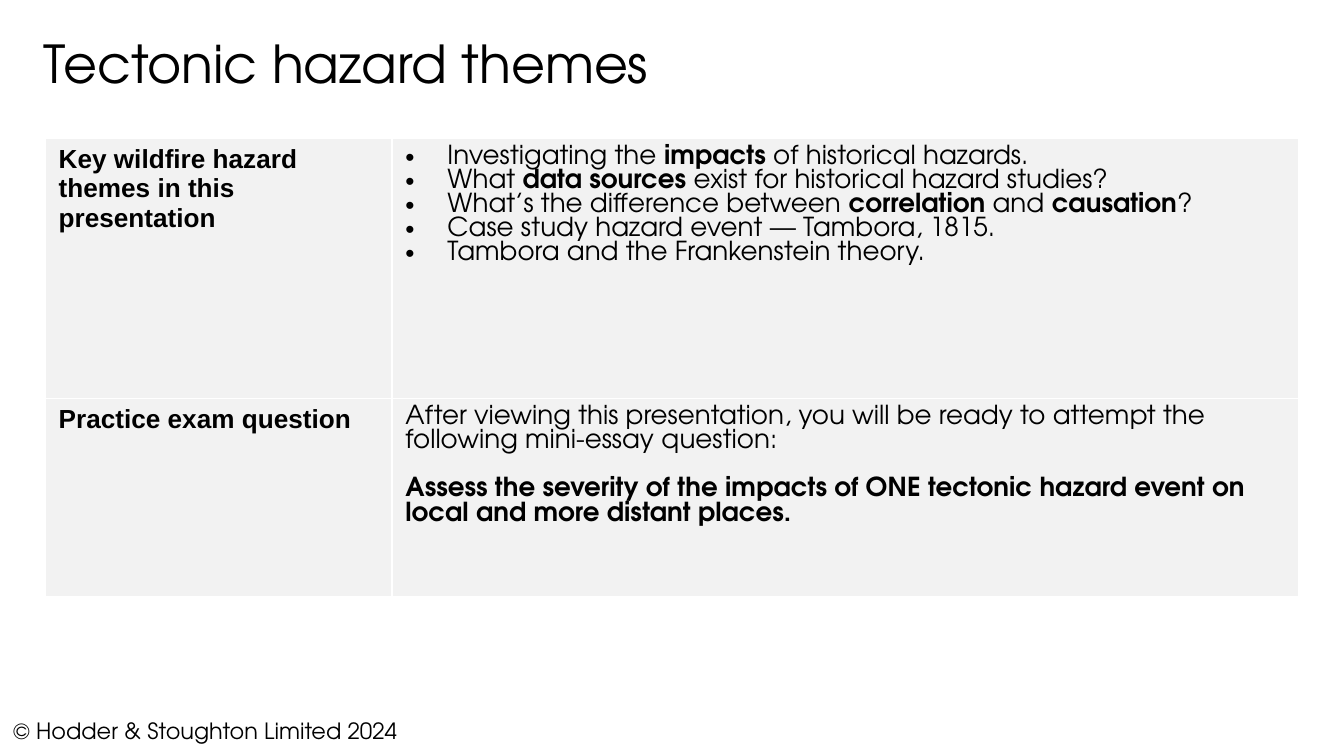
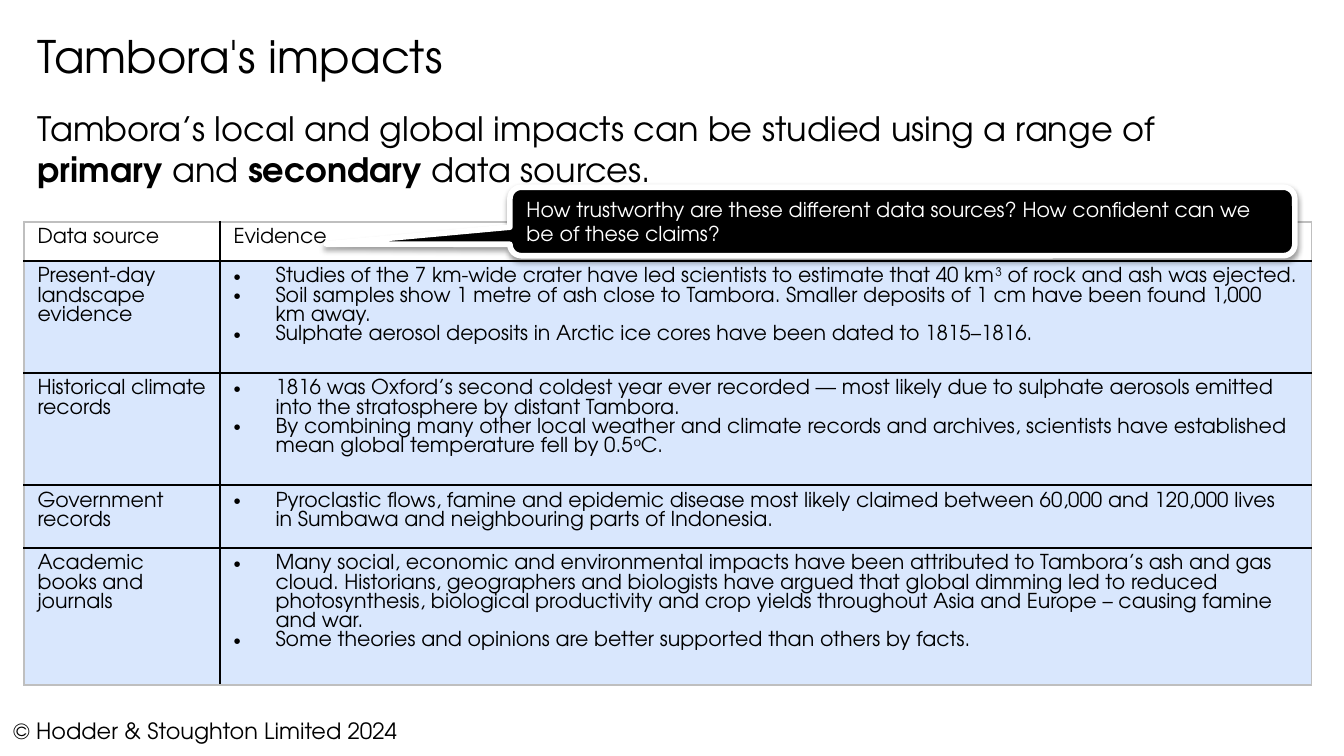
import lxml.etree
import pptx
import pptx.dml.color
import pptx.enum.shapes
import pptx.enum.text
import pptx.oxml.ns
import pptx.util

Pt = pptx.util.Pt
qn = pptx.oxml.ns.qn

COLORS = {
    "black": "000000",
    "white": "FFFFFF",
    "theme_fill": "F2F2F2",
    "evidence_fill": "D9E7FD",
    "outer_edge": "BFBFBF",
}
BODY_FONT = "TeX Gyre Adventor"
LABEL_FONT = "Arial"
COPYRIGHT = "© Hodder & Stoughton Limited 2024"
BULLET_INDENT = 22.5

THEMES = [
    "Investigating the **impacts** of historical hazards.",
    "What **data sources **exist for historical hazard studies?",
    "What’s the difference between **correlation** and **causation**?",
    "Case study hazard event — Tambora, 1815.",
    "Tambora and the Frankenstein theory.",
]
EXAM_QUESTION = [
    "After viewing this presentation, you will be ready to attempt the following mini-essay question:",
    "**Assess the severity of the impacts of ONE tectonic hazard event on local and more distant places.**",
]
EVIDENCE = [
    ("Present-day landscape evidence", [
        "Studies of the 7 km-wide crater have led scientists to estimate that 40 km^3^ of rock and ash was ejected.",
        "Soil samples show 1 metre of ash close to Tambora. Smaller deposits of 1 cm have been found 1,000 km away.",
        "Sulphate aerosol deposits in Arctic ice cores have been dated to 1815–1816.",
    ]),
    ("Historical climate records", [
        "1816 was Oxford’s second coldest year ever recorded — most likely due to sulphate aerosols emitted "
        "into the stratosphere by distant Tambora.",
        "By combining many other local weather and climate records and archives, scientists have established "
        "mean global temperature fell by 0.5ᵒC.",
    ]),
    ("Government records", [
        "Pyroclastic flows, famine and epidemic disease most likely claimed between 60,000 and 120,000 lives "
        "in Sumbawa and neighbouring parts of Indonesia.",
    ]),
    ("Academic books and journals", [
        "Many social, economic and environmental impacts have been attributed to Tambora’s ash and gas cloud. "
        "Historians, geographers and biologists have argued that global dimming led to reduced photosynthesis, "
        "biological productivity and crop yields throughout Asia and Europe – causing famine and war.",
        "Some theories and opinions are better supported than others by facts.",
    ]),
]


def rgb(color):
    return pptx.dml.color.RGBColor.from_string(COLORS[color])


def add_element(parent, tag, **attributes):
    element = lxml.etree.SubElement(parent, qn(tag))
    for key, value in attributes.items():
        element.set(key, str(value))
    return element


def add_marked_runs(paragraph, text):
    """**...** marks bold text, ^...^ marks superscript."""
    for i, part in enumerate(text.split("**")):
        for j, piece in enumerate(part.split("^")):
            if not piece:
                continue
            run = paragraph.add_run()
            run.text = piece
            if i % 2:
                run.font.bold = True
            if j % 2:
                run.font._element.set("baseline", "30000")


def write(frame, lines, size, font=BODY_FONT, color="black", bold=None,
          bullets=False, spacing=None, gap=0):
    for i, line in enumerate(lines):
        paragraph = frame.add_paragraph() if i else frame.paragraphs[0]
        if bullets:
            properties = paragraph._p.get_or_add_pPr()
            properties.set("marL", str(Pt(BULLET_INDENT)))
            properties.set("indent", str(-Pt(BULLET_INDENT)))
            add_element(properties, "a:buFont", typeface=LABEL_FONT)
            add_element(properties, "a:buChar", char="•")
        if spacing:
            paragraph.line_spacing = spacing
        if i and gap:
            paragraph.space_before = Pt(gap)
        paragraph.font.size = Pt(size)
        paragraph.font.name = font
        paragraph.font.color.rgb = rgb(color)
        if bold is not None:
            paragraph.font.bold = bold
        add_marked_runs(paragraph, line)


def add_text(slide, box, text, size, inset=3.6, spacing=None):
    frame = slide.shapes.add_textbox(*map(Pt, box)).text_frame
    frame.word_wrap = True
    frame.margin_top = frame.margin_bottom = Pt(inset)
    write(frame, [text], size, spacing=spacing)


def add_frame(slide, title, title_box, title_size):
    """Title and copyright line shared by all slides."""
    add_text(slide, title_box, title, title_size, inset=7.2)
    add_text(slide, (0, 380.6, 256, 21.6), COPYRIGHT, 12)


def add_grid(slide, left, top, widths, heights):
    table = slide.shapes.add_table(
        len(heights), len(widths), Pt(left), Pt(top),
        Pt(sum(widths)), Pt(sum(heights))).table
    table.first_row = table.horz_banding = False
    for column, width in zip(table.columns, widths):
        column.width = Pt(width)
    for row, height in zip(table.rows, heights):
        row.height = Pt(height)
    return table


def style_grid(table, inner, outer, fill_of_row):
    last_row, last_column = len(table.rows) - 1, len(table.columns) - 1
    for r in range(last_row + 1):
        for c in range(last_column + 1):
            cell = table.cell(r, c)
            edges = {"a:lnL": c == 0, "a:lnR": c == last_column,
                     "a:lnT": r == 0, "a:lnB": r == last_row}
            for tag, is_outer in edges.items():
                line = add_element(cell._tc.get_or_add_tcPr(), tag, w=Pt(1))
                fill = add_element(line, "a:solidFill")
                add_element(fill, "a:srgbClr", val=COLORS[outer if is_outer else inner])
            cell.fill.solid()
            cell.fill.fore_color.rgb = rgb(fill_of_row(r))


def add_themes_table(slide, left, top):
    table = add_grid(slide, left, top, [185.8, 486], [139.4, 106.3])
    style_grid(table, "white", "white", lambda row: "theme_fill")
    labels = ["Key wildfire hazard themes in this presentation", "Practice exam question"]
    for row, label in enumerate(labels):
        write(table.cell(row, 0).text_frame, [label], 14, font=LABEL_FONT, bold=True)
    write(table.cell(0, 1).text_frame, THEMES, 14, bullets=True)
    write(table.cell(1, 1).text_frame, EXAM_QUESTION, 14, gap=13)


def add_evidence_table(slide, left, top):
    table = add_grid(slide, left, top, [105, 584.8], [21, 60, 60, 33.5, 73.5])
    style_grid(table, "black", "outer_edge",
               lambda row: "evidence_fill" if row else "white")
    for row, (source, findings) in enumerate([("Data source", ["Evidence"]), *EVIDENCE]):
        write(table.cell(row, 0).text_frame, [source], 11)
        write(table.cell(row, 1).text_frame, findings, 11, bullets=row > 0)


def add_question_callout(slide, box):
    callout = slide.shapes.add_shape(
        pptx.enum.shapes.MSO_SHAPE.ROUNDED_RECTANGULAR_CALLOUT, *map(Pt, box))
    for i, value in enumerate([-0.734, 0.329, 0.167]):
        callout.adjustments[i] = value
    callout.fill.solid()
    callout.fill.fore_color.rgb = rgb("black")
    callout.line.color.rgb = rgb("white")
    callout.line.width = Pt(3)

    # Soft shadow straight below
    callout.shadow.inherit = False
    effects = callout._element.spPr.find(qn("a:effectLst"))
    shadow = add_element(effects, "a:outerShdw", blurRad=Pt(3.1), dist=Pt(1.6),
                         dir=5400000, rotWithShape=0)
    shade = add_element(shadow, "a:srgbClr", val=COLORS["black"])
    add_element(shade, "a:alpha", val=38000)

    frame = callout.text_frame
    frame.word_wrap = True
    frame.vertical_anchor = pptx.enum.text.MSO_ANCHOR.MIDDLE
    write(frame, ["How trustworthy are these different data sources? "
                  "How confident can we be of these claims?"], 11, color="white")
    frame.paragraphs[0].alignment = pptx.enum.text.PP_ALIGN.LEFT


def build_themes_slide(slide):
    add_frame(slide, "Tectonic hazard themes", (16.3, 9.4, 450, 70), 28)
    add_themes_table(slide, 24.2, 74)


def build_impacts_slide(slide):
    add_frame(slide, "Tambora's impacts", (13, 8, 510, 50), 24)
    add_text(slide, (13, 54, 681, 51),
             "Tambora’s local and global impacts can be studied using a range of "
             "**primary** and **secondary** data sources.", 18, spacing=1.02)
    add_evidence_table(slide, 12.9, 118.8)
    add_question_callout(slide, (273.2, 100.3, 420.5, 36.7))


def main():
    deck = pptx.Presentation()
    deck.slide_width, deck.slide_height = Pt(720), Pt(405)
    for build in (build_themes_slide, build_impacts_slide):
        build(deck.slides.add_slide(deck.slide_layouts[6]))
    deck.save("out.pptx")


if __name__ == "__main__":
    main()
